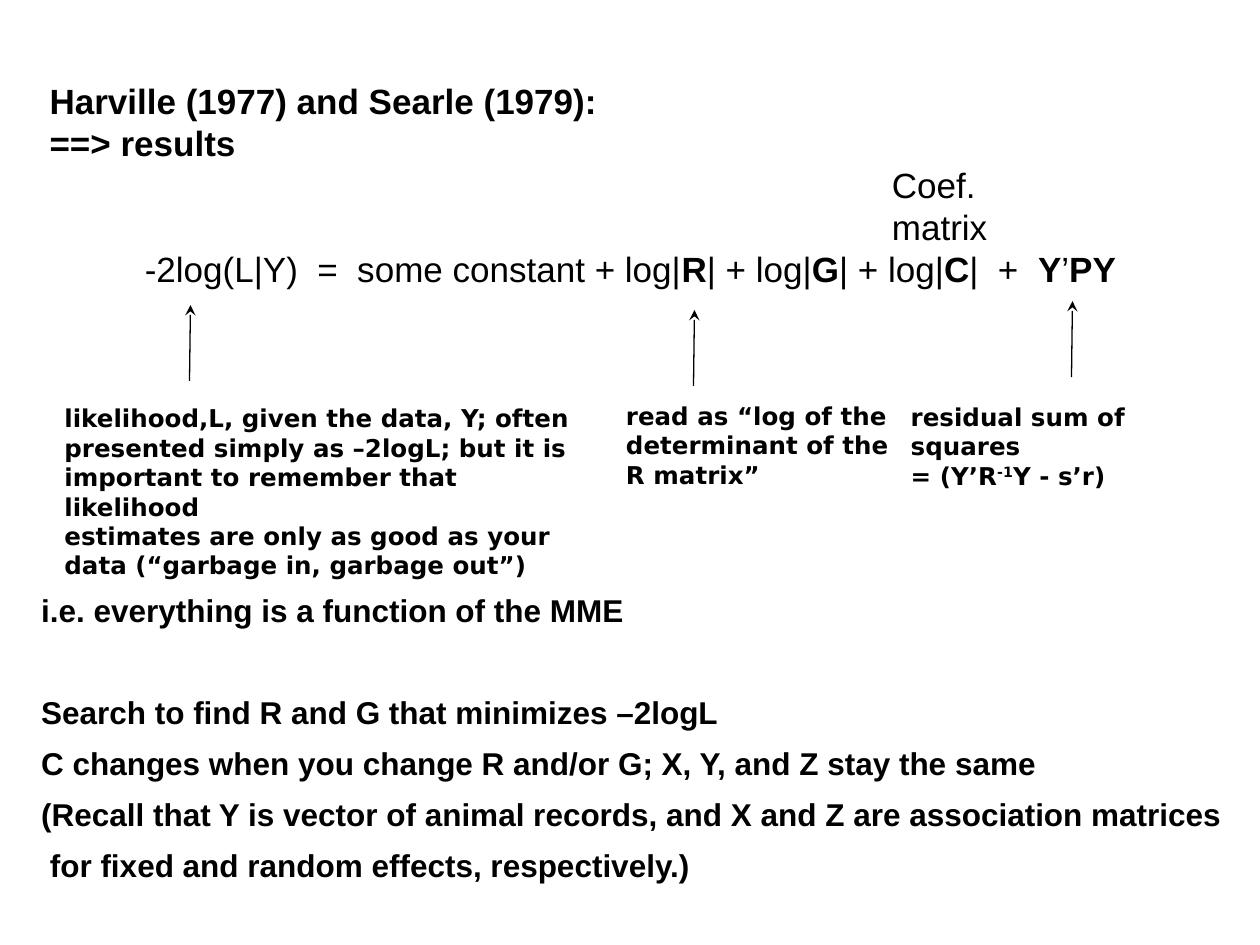
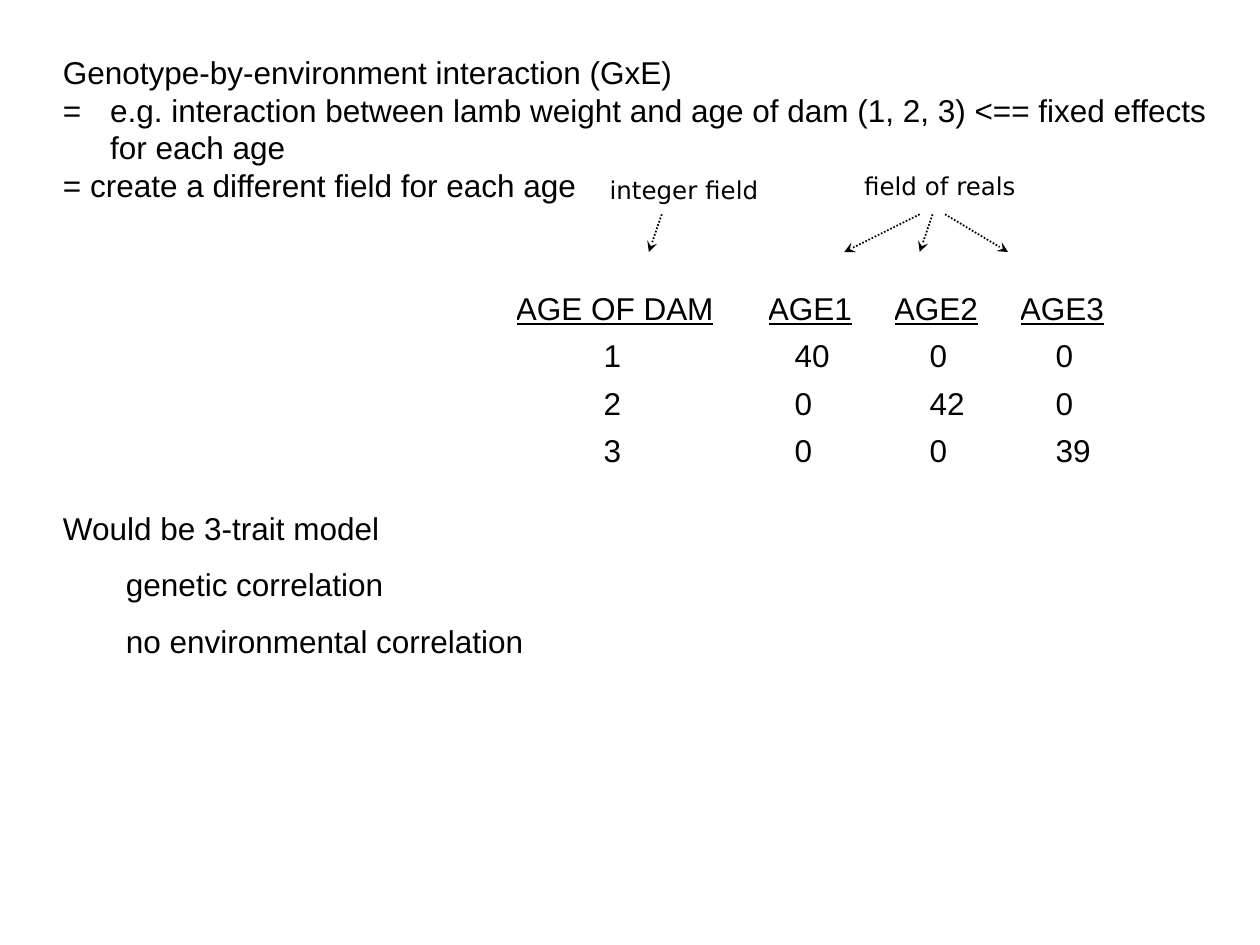
from dataclasses import dataclass

from lxml import etree
from pptx import Presentation
from pptx import util as u
from pptx.dml.color import RGBColor
from pptx.enum import dml, shapes, text
from pptx.oxml.ns import qn


@dataclass(frozen=True)
class Theme:
    ink: RGBColor = RGBColor(0, 0, 0)
    main: str = "Arial"
    note: str = "DejaVu Sans"
    formula_size: int = 20
    body_size: int = 18
    note_size: int = 14


T = Theme()
FORMULA = {"name": T.main, "size": u.Pt(T.formula_size)}
BODY = {"name": T.main, "size": u.Pt(T.body_size)}
NOTE = {"name": T.note, "size": u.Pt(T.note_size)}
BOLD = {"bold": True}

# A paragraph is a string, or a dict with "runs" and its layout (lengths in cm).
# A run is a string, or a pair of text and format.
HARVILLE = [
    {"runs": [("Harville (1977) and Searle (1979):", BOLD)], "left": 0.6},
    {"runs": [("==> results", BOLD)], "left": 0.6},
    {"runs": ["Coef."], "left": 17.58},
    {"runs": ["matrix"], "left": 17.58},
    {"runs": ["-2log(L|Y)  =  some constant + log|", ("R", BOLD), "| + log|",
              ("G", BOLD), "| + log|", ("C", BOLD), "|  +  ", ("Y", BOLD), "’",
              ("PY", BOLD)], "left": 2.52},
]
# (left, top, width, height), paragraphs
TERM_NOTES = [
    ((1.3, 8.13, 10.7, 2.87), [
        "likelihood,L, given the data, Y; often",
        "presented simply as –2logL; but it is",
        "important to remember that likelihood",
        "estimates are only as good as your",
        "data (“garbage in, garbage out”)"]),
    ((12.62, 8.08, 5.72, 1.88), [
        "read as “log of the", "determinant of the", "R matrix”"]),
    ((18.36, 8.1, 6.5, 1.3), [
        "residual sum of squares",
        {"runs": ["= (Y’R", ("-1", {"baseline": 30000}), "Y - s’r)"]}]),
]
TERM_ARROW_TIPS = [(3.84, 6.15), (14, 6.25), (21.62, 6.07)]
TERM_ARROW_HEIGHT = 1.53
SEARCH = [
    "i.e. everything is a function of the MME",
    {"runs": ["Search to find R and G that minimizes –2logL"], "before": 29},
    "C changes when you change R and/or G; X, Y, and Z stay the same",
    "(Recall that Y is vector of animal records, and X and Z are association matrices",
    " for fixed and random effects, respectively.)",
]

INTERACTION = [
    "Genotype-by-environment interaction (GxE)",
    {"runs": ["=\te.g. interaction between lamb weight and age of dam (1, 2, 3) "
              "<== fixed effects"], "left": 0.95, "first": -0.95},
    {"runs": ["for each age"], "left": 0.95},
    "= create a different field for each age",
]
FIELD_NOTES = [
    ((12.29, 3.53, 3.8, 0.5), ["integer field"]),
    ((17.42, 3.45, 5.4, 1), ["field of reals"]),
]
FIELD_ARROWS = [(13.34, 13.08), (18.54, 17.02), (18.8, 18.54), (19.05, 20.32)]
FIELD_ARROW_TOP, FIELD_ARROW_BOTTOM = 4.32, 5.08
DAM_HEADER = ["AGE OF DAM", "AGE1", "AGE2", "AGE3"]
DAM_ROWS = [[1, 40, 0, 0], [2, 0, 42, 0], [3, 0, 0, 39]]
DAM_WIDTHS = [5.08, 2.54, 2.54, 2.54]
DAM_INDENTS = [1.77, 0.54, 0.72, 0.72]
DAM_LEFT, DAM_TOP, DAM_ROW_HEIGHT = 10.4, 5.77, 0.95
TRAITS = [
    "Would be 3-trait model",
    {"runs": ["genetic correlation"], "left": 1.27},
    {"runs": ["no environmental correlation"], "left": 1.27},
]


def add_run(p, words, fmt):
    r = p.add_run()
    r.text = words
    r.font.color.rgb = T.ink
    for key, value in fmt.items():
        if key == "baseline":
            r._r.get_or_add_rPr().set(key, str(value))
        else:
            setattr(r.font, key, value)


def fill_frame(tf, paras, fmt, spacing=None):
    for i, para in enumerate(paras):
        para = para if isinstance(para, dict) else {"runs": [para]}
        p = tf.paragraphs[0] if i == 0 else tf.add_paragraph()
        p.line_spacing = spacing
        if "before" in para:
            p.space_before = u.Pt(para["before"])
        pPr = p._p.get_or_add_pPr()
        for key, attr in (("left", "marL"), ("first", "indent")):
            if key in para:
                pPr.set(attr, str(int(u.Cm(para[key]))))
        for run in para["runs"]:
            words, extra = (run, {}) if isinstance(run, str) else run
            add_run(p, words, {**fmt, **extra})


def set_margins(target, **sides):
    for side in ("left", "top", "right", "bottom"):
        setattr(target, f"margin_{side}", u.Cm(sides.get(side, 0)))


def add_text(s, box, paras, fmt, spacing=None, inset=True):
    tf = s.shapes.add_textbox(*map(u.Cm, box)).text_frame
    tf.word_wrap = True
    if not inset:
        set_margins(tf)
    fill_frame(tf, paras, fmt, spacing)


def add_arrow(s, start, end, width, dash=None):
    sp = s.shapes.add_connector(shapes.MSO_CONNECTOR.STRAIGHT,
                                *map(u.Cm, (*start, *end)))
    sp.line.color.rgb = T.ink
    sp.line.width = u.Pt(width)
    if dash:
        sp.line.dash_style = dash
    etree.SubElement(sp.line._get_or_add_ln(), qn("a:tailEnd"), type="stealth")
    etree.SubElement(sp._element.spPr, qn("a:effectLst"))


def add_dam_table(s):
    rows = [DAM_HEADER, *DAM_ROWS]
    size = (sum(DAM_WIDTHS), DAM_ROW_HEIGHT * len(rows))
    table = s.shapes.add_table(len(rows), len(DAM_HEADER),
                               *map(u.Cm, (DAM_LEFT, DAM_TOP, *size))).table
    table.first_row = table.horz_banding = False
    for column, width in zip(table.columns, DAM_WIDTHS):
        column.width = u.Cm(width)
    for i, row in enumerate(rows):
        table.rows[i].height = u.Cm(DAM_ROW_HEIGHT)
        for j, value in enumerate(row):
            cell = table.cell(i, j)
            cell.fill.background()
            cell.vertical_anchor = text.MSO_ANCHOR.MIDDLE
            set_margins(cell, left=DAM_INDENTS[j] if i else 0)
            fill_frame(cell.text_frame, [str(value)], {**BODY, "underline": i == 0})


def likelihood_slide(s):
    add_text(s, (0.15, 1.47, 24.2, 4.5), HARVILLE, FORMULA)
    for box, paras in TERM_NOTES:
        add_text(s, box, paras, {**NOTE, **BOLD}, inset=False)
    for x, y in TERM_ARROW_TIPS:
        add_arrow(s, (x - 0.02, y + TERM_ARROW_HEIGHT), (x, y), 0.75)
    add_text(s, (0.58, 11.53, 24.5, 6.45), SEARCH, {**BODY, **BOLD}, 1.35)


def interaction_slide(s):
    add_text(s, (1.02, 0.94, 23.8, 3.3), INTERACTION, BODY)
    for box, paras in FIELD_NOTES:
        add_text(s, box, paras, NOTE, inset=False)
    for x1, x2 in FIELD_ARROWS:
        add_arrow(s, (x1, FIELD_ARROW_TOP), (x2, FIELD_ARROW_BOTTOM), 1,
                  dml.MSO_LINE.ROUND_DOT)
    add_dam_table(s)
    add_text(s, (1.02, 9.75, 9.8, 4.47), TRAITS, BODY, 1.5)


def main():
    prs = Presentation()
    prs.slide_width, prs.slide_height = u.Cm(25.4), u.Cm(19.05)
    for build in (likelihood_slide, interaction_slide):
        build(prs.slides.add_slide(prs.slide_layouts[6]))
    prs.save("out.pptx")


if __name__ == "__main__":
    main()
